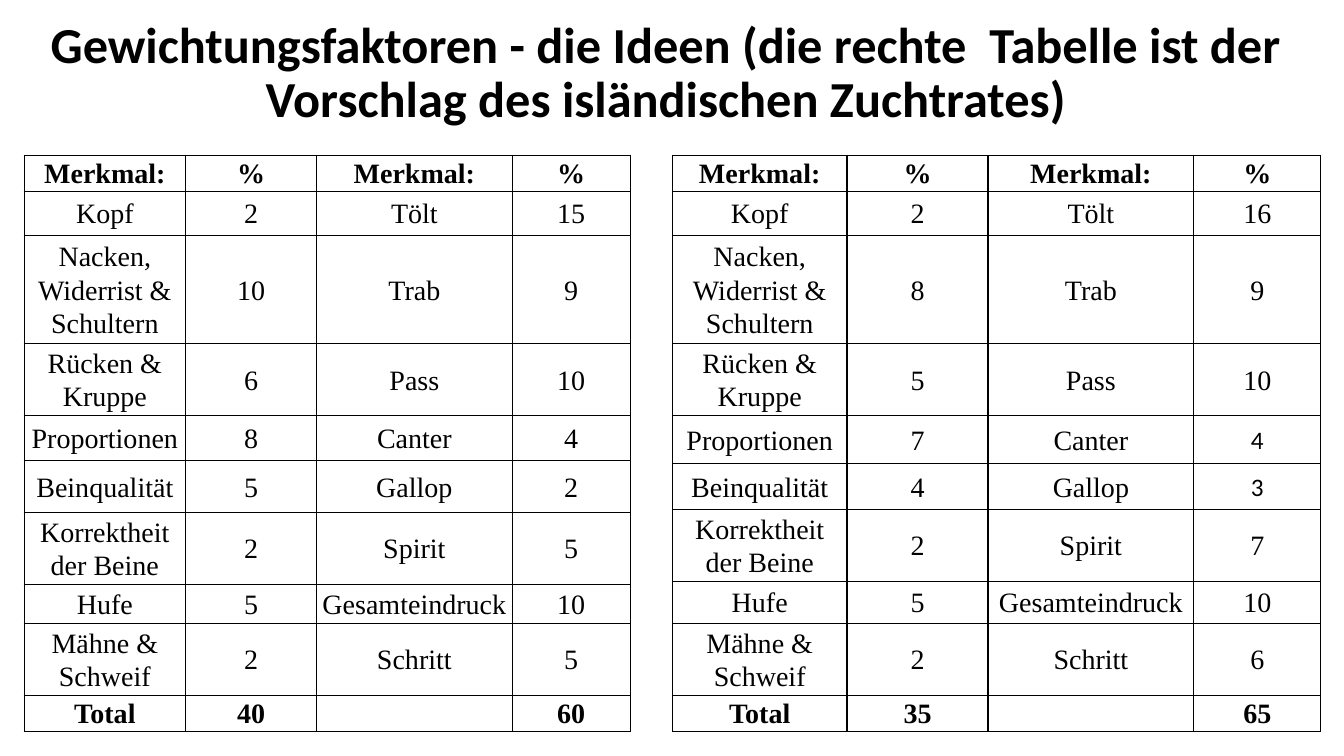
from lxml import etree
from pptx import Presentation
from pptx import util as u
from pptx.dml.color import RGBColor
from pptx.enum import text
from pptx.oxml.ns import qn

PX = 9144
COLORS = {"ink": "000000"}
SERIF, SANS = "Times New Roman", "Calibri"
TITLE = ("Gewichtungsfaktoren - die Ideen (die rechte  Tabelle ist der "
         "Vorschlag des isländischen Zuchtrates)")
BODY_TRAITS = ["Merkmal:", "Kopf", "Nacken, Widerrist & Schultern",
               "Rücken & Kruppe", "Proportionen", "Beinqualität",
               "Korrektheit der Beine", "Hufe", "Mähne & Schweif", "Total"]
GAIT_TRAITS = ["Merkmal:", "Tölt", "Trab", "Pass", "Canter", "Gallop",
               "Spirit", "Gesamteindruck", "Schritt", ""]
TABLES = [
    {"left": 24, "cols": [160, 130, 194, 117],
     "rows": [35, 44, 107, 71, 45, 51, 71, 39, 71, 35],
     "body": ["%", 2, 10, 6, 8, 5, 2, 5, 2, 40],
     "gait": ["%", 15, 9, 10, 4, 2, 5, 10, 5, 60],
     "sans_cells": []},
    {"left": 667, "cols": [173, 140, 204, 126],
     "rows": [35, 44, 106, 71, 48, 45, 71, 42, 71, 35],
     "body": ["%", 2, 8, 5, 7, 4, 2, 5, 2, 35],
     "gait": ["%", 16, 9, 10, 4, 3, 7, 10, 6, 65],
     "sans_cells": [(4, 3), (5, 3)]},
]


def px(n):
    """Turn px into EMU."""
    return u.Emu(n * PX)


def set_paragraph(p, content, font, size, bold, spacing):
    """Write one centred paragraph in one style."""
    if content:
        p.add_run().text = content
    p.alignment = text.PP_ALIGN.CENTER
    p.line_spacing = spacing
    p.font.name = font
    p.font.size = u.Pt(size)
    p.font.bold = bold
    p.font.color.rgb = RGBColor.from_string(COLORS["ink"])


def add_title(s):
    """Add the slide heading."""
    tf = s.shapes.add_textbox(px(38), px(19), px(1245), px(109)).text_frame
    tf.word_wrap = True
    tf.vertical_anchor = text.MSO_ANCHOR.MIDDLE
    set_paragraph(tf.paragraphs[0], TITLE, SANS, 36, True, 0.9)


def set_borders(cell):
    """Draw a thin line on all four sides of a cell."""
    tc_pr = cell._tc.get_or_add_tcPr()
    for i, side in enumerate(("a:lnL", "a:lnR", "a:lnT", "a:lnB")):
        ln = etree.Element(qn(side), w=str(u.Pt(1)))
        fill = etree.SubElement(ln, qn("a:solidFill"))
        etree.SubElement(fill, qn("a:srgbClr"), val=COLORS["ink"])
        tc_pr.insert(i, ln)


def set_cell(cell, content, bold, sans):
    """Fill and style one table cell."""
    cell.fill.background()
    cell.margin_left = cell.margin_right = px(5)
    cell.margin_top = cell.margin_bottom = 0
    cell.vertical_anchor = text.MSO_ANCHOR.MIDDLE
    font, size = (SANS, 18) if sans else (SERIF, 20)
    set_paragraph(cell.text_frame.paragraphs[0], content, font, size, bold, 1.07)
    set_borders(cell)


def add_weights(s, spec_left, cols, rows, body, gait, sans_cells):
    """Add one table of weighting factors."""
    table = s.shapes.add_table(len(rows), len(cols), px(spec_left), px(154),
                               px(sum(cols)), px(sum(rows))).table
    table.first_row = table.horz_banding = False
    for col, width in zip(table.columns, cols):
        col.width = px(width)
    for row, height in zip(table.rows, rows):
        row.height = px(height)
    for r, values in enumerate(zip(BODY_TRAITS, body, GAIT_TRAITS, gait)):
        bold = r in (0, len(rows) - 1)
        for c, value in enumerate(values):
            set_cell(table.cell(r, c), str(value), bold, (r, c) in sans_cells)


def main():
    """Build the slide and save it."""
    prs = Presentation()
    prs.slide_width, prs.slide_height = px(1333), px(750)
    s = prs.slides.add_slide(prs.slide_layouts[6])
    add_title(s)
    for t in TABLES:
        add_weights(s, t["left"], t["cols"], t["rows"], t["body"], t["gait"],
                    t["sans_cells"])
    prs.save("out.pptx")


if __name__ == "__main__":
    main()
